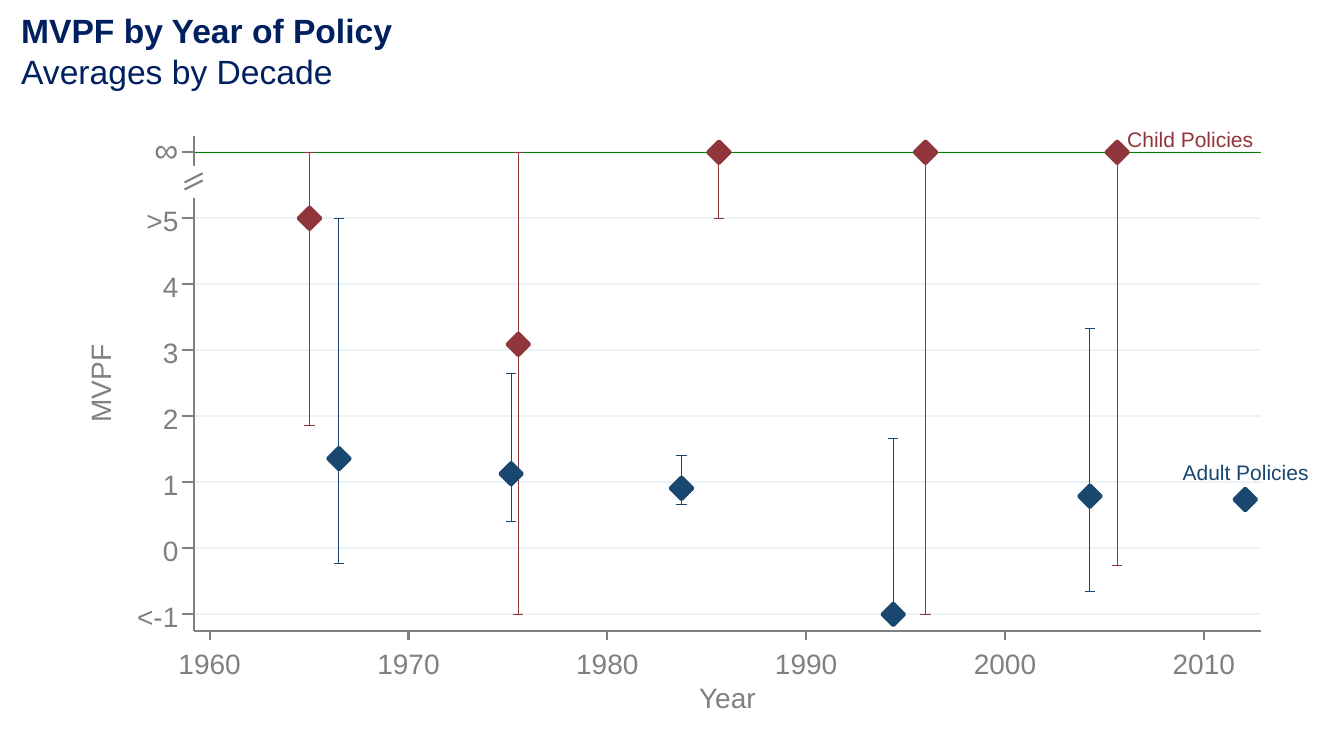
from dataclasses import dataclass

import lxml.etree
import pptx
import pptx.dml.color
import pptx.enum.shapes
import pptx.enum.text
import pptx.oxml.ns
import pptx.util
from pptx.dml.color import RGBColor
from pptx.enum.text import PP_ALIGN
from pptx.util import Inches

NAVY = RGBColor(0x00, 0x20, 0x60)
BLUE = RGBColor(0x1A, 0x47, 0x6F)
RED = RGBColor(0x90, 0x35, 0x3B)
GREEN = RGBColor(0x00, 0x80, 0x00)
GRAY = RGBColor(0x80, 0x80, 0x80)
PALE = RGBColor(0xEA, 0xF2, 0xF3)

FONT = "Arial"
AXIS_LEFT, AXIS_RIGHT = 1.92, 12.51
AXIS_TOP, AXIS_BOTTOM = 1.35, 6.26
BREAK_TOP, BREAK_BOTTOM = 1.65, 1.96
INFINITE = 6
MARKER_SIZE = 0.22
CAP_HALF = 0.05
MVPF_LABELS = ["<-1", "0", "1", "2", "3", "4", ">5", "∞"]


@dataclass(frozen=True)
class Decade:
    """Average MVPF of one decade's policies with its interval."""
    year: float
    mvpf: float
    low: float
    high: float


@dataclass(frozen=True)
class PolicyGroup:
    name: str
    color: RGBColor
    label_left: float
    label_top: float
    decades: list[Decade]


GROUPS = [
    PolicyGroup("Adult Policies", BLUE, 11.73, 4.56, [
        Decade(1966.5, 1.36, -0.23, 5),
        Decade(1975.16, 1.13, 0.4, 2.65),
        Decade(1983.73, 0.91, 0.66, 1.4),
        Decade(1994.38, -1, -1, 1.66),
        Decade(2004.27, 0.79, -0.65, 3.33),
        Decade(2012.08, 0.74, 0.68, 0.8),
    ]),
    PolicyGroup("Child Policies", RED, 11.18, 1.26, [
        Decade(1965.02, 5, 1.86, INFINITE),
        Decade(1975.52, 3.09, -1, INFINITE),
        Decade(1985.61, INFINITE, 5, INFINITE),
        Decade(1996, INFINITE, -1, INFINITE),
        Decade(2005.64, INFINITE, -0.26, INFINITE),
    ]),
]


def year_x(year: float) -> float:
    return 2.08 + (year - 1960) * 0.1972


def mvpf_y(mvpf: float) -> float:
    return 5.44 - mvpf * 0.655


def format_paragraph(paragraph, text: str, *, size: float, color: RGBColor,
                     bold: bool = False, align=PP_ALIGN.LEFT) -> None:
    paragraph.alignment = align
    run = paragraph.add_run()
    run.text = text
    run.font.name = FONT
    run.font.size = pptx.util.Pt(size)
    run.font.bold = bold
    run.font.color.rgb = color


def clear_margins(frame) -> None:
    frame.margin_left = frame.margin_right = 0
    frame.margin_top = frame.margin_bottom = 0
    frame.word_wrap = True
    frame.auto_size = pptx.enum.text.MSO_AUTO_SIZE.NONE
    frame.vertical_anchor = pptx.enum.text.MSO_ANCHOR.TOP


def add_label(slide, text: str, left: float, top: float, width: float, *,
              size: float = 20, color: RGBColor = GRAY,
              align=PP_ALIGN.CENTER, rotation: float = 0) -> None:
    label = slide.shapes.add_textbox(
        Inches(left), Inches(top), Inches(width), Inches(0.39))
    label.rotation = rotation
    clear_margins(label.text_frame)
    format_paragraph(label.text_frame.paragraphs[0], text,
                     size=size, color=color, align=align)


def add_line(slide, x1: float, y1: float, x2: float, y2: float,
             color: RGBColor, width: float = 1.5) -> None:
    line = slide.shapes.add_connector(
        pptx.enum.shapes.MSO_CONNECTOR.STRAIGHT,
        Inches(x1), Inches(y1), Inches(x2), Inches(y2))
    line.line.color.rgb = color
    line.line.width = pptx.util.Pt(width)
    lxml.etree.SubElement(line._element.spPr, pptx.oxml.ns.qn("a:effectLst"))


def add_title(slide) -> None:
    title = slide.shapes.title
    title.left, title.top = Inches(0.21), Inches(0.1)
    title.width, title.height = Inches(11.62), Inches(0.81)
    frame = title.text_frame
    clear_margins(frame)
    format_paragraph(frame.paragraphs[0], "MVPF by Year of Policy",
                     size=24, color=NAVY, bold=True)
    format_paragraph(frame.add_paragraph(), "Averages by Decade",
                     size=24, color=NAVY)


def add_interval(slide, decade: Decade, color: RGBColor) -> None:
    x = year_x(decade.year)
    add_line(slide, x, mvpf_y(decade.low), x, mvpf_y(decade.high), color, 0.75)
    for end in (decade.low, decade.high):
        y = mvpf_y(end)
        add_line(slide, x - CAP_HALF, y, x + CAP_HALF, y, color, 0.75)


def add_marker(slide, decade: Decade, color: RGBColor) -> None:
    marker = slide.shapes.add_shape(
        pptx.enum.shapes.MSO_SHAPE.DIAMOND,
        Inches(year_x(decade.year) - MARKER_SIZE / 2),
        Inches(mvpf_y(decade.mvpf) - MARKER_SIZE / 2),
        Inches(MARKER_SIZE), Inches(MARKER_SIZE))
    marker.shadow.inherit = False
    marker.fill.solid()
    marker.fill.fore_color.rgb = color
    marker.line.color.rgb = color
    marker.line.width = pptx.util.Pt(2.5)


def add_mvpf_axis(slide) -> None:
    for top, bottom in ((AXIS_TOP, BREAK_TOP), (BREAK_BOTTOM, AXIS_BOTTOM)):
        add_line(slide, AXIS_LEFT, top, AXIS_LEFT, bottom, GRAY)
    for slash_top in (1.72, 1.79):
        add_line(slide, 1.83, slash_top + 0.09, 2.01, slash_top, GRAY)
    for mvpf, text in enumerate(MVPF_LABELS, start=-1):
        y = mvpf_y(mvpf)
        add_line(slide, AXIS_LEFT, y, 1.81, y, GRAY)
        rise, size = (0.23, 24) if mvpf == INFINITE else (0.15, 20)
        add_label(slide, text, 1.17, y - rise, 0.6, size=size,
                  align=PP_ALIGN.RIGHT)
    add_label(slide, "MVPF", 0.57, 3.61, 0.9, rotation=270)


def add_year_axis(slide) -> None:
    add_line(slide, AXIS_LEFT, AXIS_BOTTOM, AXIS_RIGHT, AXIS_BOTTOM, GRAY)
    for year in range(1960, 2011, 10):
        x = year_x(year)
        add_line(slide, x, AXIS_BOTTOM, x, 6.35, GRAY)
        add_label(slide, str(year), x - 0.4, 6.41, 0.8)
    add_label(slide, "Year", (AXIS_LEFT + AXIS_RIGHT) / 2 - 0.4, 6.75, 0.8)


def main() -> None:
    deck = pptx.Presentation()
    deck.slide_width, deck.slide_height = Inches(13.33), Inches(7.5)
    slide = deck.slides.add_slide(deck.slide_layouts[5])
    add_title(slide)
    for mvpf in range(-1, INFINITE + 1):
        y = mvpf_y(mvpf)
        add_line(slide, AXIS_LEFT, y, AXIS_RIGHT, y, PALE)
    infinity_y = mvpf_y(INFINITE)
    add_line(slide, AXIS_LEFT, infinity_y, AXIS_RIGHT, infinity_y, GREEN, 0.75)
    for group in GROUPS:
        for decade in group.decades:
            add_interval(slide, decade, group.color)
    for group in GROUPS:
        for decade in group.decades:
            add_marker(slide, decade, group.color)
        add_label(slide, group.name, group.label_left, group.label_top, 1.4,
                  size=15, color=group.color, align=PP_ALIGN.LEFT)
    add_mvpf_axis(slide)
    add_year_axis(slide)
    deck.save("out.pptx")


if __name__ == "__main__":
    main()
